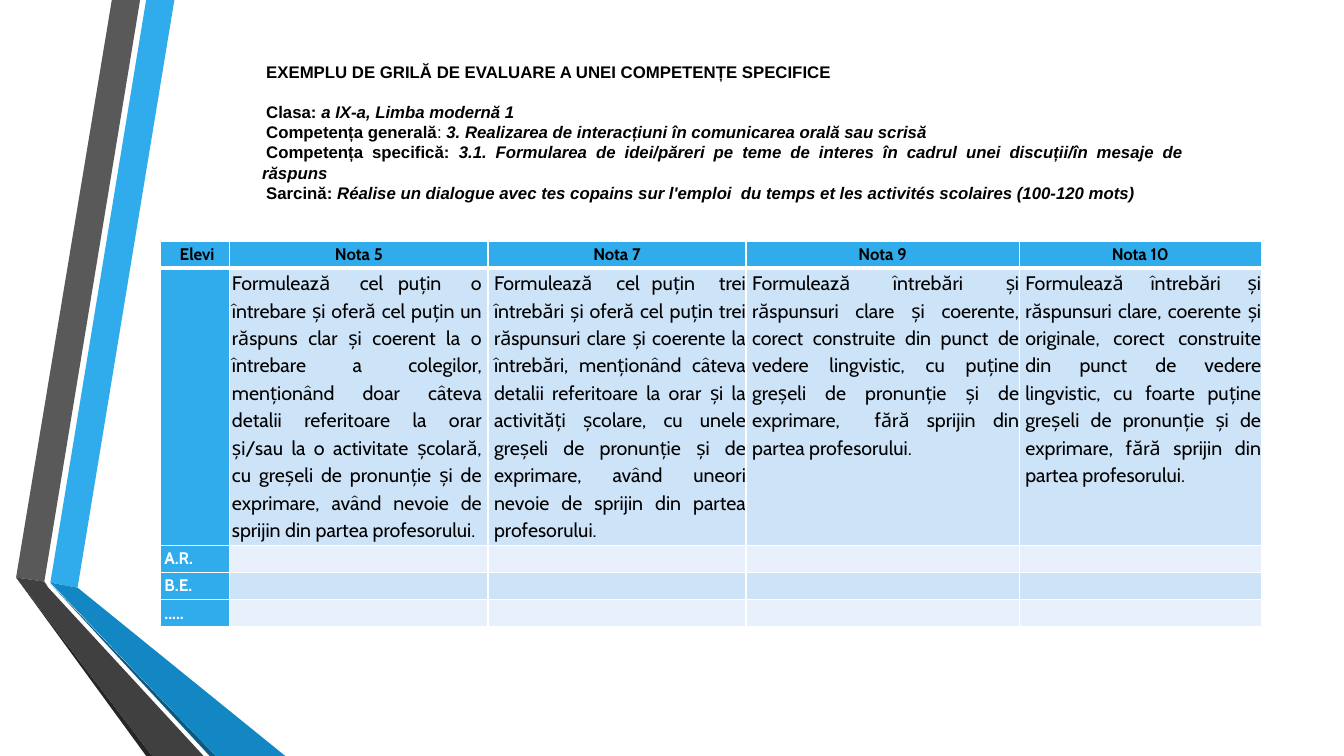
from dataclasses import dataclass

from lxml.etree import SubElement
from pptx import Presentation
from pptx.dml.color import RGBColor
from pptx.enum.text import MSO_ANCHOR, MSO_AUTO_SIZE, PP_ALIGN
from pptx.oxml import parse_xml
from pptx.oxml.ns import nsdecls, qn
from pptx.util import Inches, Pt


@dataclass(frozen=True)
class Theme:
    """Colours, fonts and type sizes of the slide."""
    blue: str = "30ACEC"
    deep_blue: str = "1287C3"
    navy: str = "0C5A82"
    grey: str = "595959"
    dark_grey: str = "404040"
    charcoal: str = "262626"
    band: str = "CDE3F8"
    light_band: str = "E8F1FB"
    white: str = "FFFFFF"
    black: str = "000000"
    heading_font: str = "Arial"
    table_font: str = "Cabin"
    small: int = 12
    body: int = 14


T = Theme()

RIBBONS = [
    (T.blue, [(0.5, 5.78), (0.77, 5.83), (1.73, 0), (1.45, 0)]),
    (T.grey, [(1.39, 0), (1.11, 0), (0.16, 5.73), (0.44, 5.77)]),
    (T.charcoal, [(0.16, 5.73), (1.45, 7.5), (1.51, 7.5)]),
    (T.navy, [(0.5, 5.79), (2.08, 7.5), (2.14, 7.5)]),
    (T.deep_blue, [(0.5, 5.78), (2.14, 7.5), (2.83, 7.5), (0.77, 5.83)]),
    (T.dark_grey,
     [(0.16, 5.73), (1.51, 7.5), (2.02, 7.5), (0.48, 5.83), (0.44, 5.77)]),
]

TITLE = "EXEMPLU DE GRILĂ DE EVALUARE A UNEI COMPETENȚE SPECIFICE"
DETAILS = [
    ("Clasa", ": ", True, "a IX-a, Limba modernă 1"),
    ("Competența generală", ": ", False,
     "3. Realizarea de interacțiuni în comunicarea orală sau scrisă"),
    ("Competența specifică", ": ", True,
     "3.1. Formularea de idei/păreri pe teme de interes în cadrul unei "
     "discuții/în mesaje de răspuns"),
    ("Sarcină", ": ", True,
     "Réalise un dialogue avec tes copains sur l'emploi  du temps et les "
     "activités scolaires (100-120 mots)"),
]

HEADERS = ["Elevi", "Nota 5", "Nota 7", "Nota 9", "Nota 10"]
DESCRIPTORS = [
    "",
    "Formulează  cel puțin  o întrebare și oferă cel puțin un răspuns clar și "
    "coerent la o întrebare a colegilor, menționând doar câteva detalii "
    "referitoare la orar și/sau la o activitate școlară, cu greșeli de pronunție "
    "și de exprimare, având nevoie de sprijin din partea profesorului.",
    "Formulează  cel puțin  trei întrebări și oferă cel puțin trei răspunsuri "
    "clare și coerente la întrebări, menționând câteva detalii referitoare la "
    "orar și la activități școlare, cu unele greșeli de pronunție și de "
    "exprimare, având uneori nevoie de sprijin din partea profesorului.",
    "Formulează întrebări și răspunsuri clare și coerente, corect construite din "
    "punct de vedere lingvistic, cu puține greșeli de pronunție și de exprimare,  "
    "fără sprijin din partea profesorului.",
    "Formulează întrebări și răspunsuri clare, coerente și originale, corect "
    "construite din punct de vedere lingvistic, cu foarte puține greșeli de "
    "pronunție și de exprimare, fără sprijin din partea profesorului.",
]
PUPILS = ["A.R.", "B.E.", "....."]
ROWS = [HEADERS, DESCRIPTORS] + [[pupil] + [""] * 4 for pupil in PUPILS]
COL_WIDTHS = [0.69, 2.56, 2.56, 2.71, 2.4]
ROW_HEIGHTS = [0.27, 2.75, 0.27, 0.27, 0.27]


def rgb(color):
    """Turn a hex string into a colour."""
    return RGBColor.from_string(color)


def paint(target, color):
    """Give a shape or cell a solid fill."""
    target.fill.solid()
    target.fill.fore_color.rgb = rgb(color)


def add_run(p, text, font, size, color, bold=False, italic=False):
    """Append one formatted run to a paragraph."""
    r = p.add_run()
    r.text = text
    r.font.name = font
    r.font.size = Pt(size)
    r.font.color.rgb = rgb(color)
    r.font.bold = bold
    r.font.italic = italic


def set_indent(p, left, first, right=0):
    """Set the side margins and first-line indent in inches."""
    pPr = p._p.get_or_add_pPr()
    pPr.set("marL", str(Inches(left)))
    pPr.set("marR", str(Inches(right)))
    pPr.set("indent", str(Inches(first)))


def draw_ribbons(s, x, y):
    """Draw the folded ribbons from the given top left corner."""
    for color, points in RIBBONS:
        corners = [(Inches(x + px), Inches(y + py)) for px, py in points]
        fb = s.shapes.build_freeform(*corners[0], scale=1.0)
        fb.add_line_segments(corners[1:], close=True)
        sp = fb.convert_to_shape()
        sp.shadow.inherit = False
        paint(sp, color)
        sp.line.fill.background()


def place_text(sp, x, y, w, h):
    """Move a placeholder into a box and return its text frame."""
    sp.left, sp.top, sp.width, sp.height = map(Inches, (x, y, w, h))
    tf = sp.text_frame
    tf.word_wrap = True
    tf.auto_size = MSO_AUTO_SIZE.NONE
    tf.vertical_anchor = MSO_ANCHOR.TOP
    return tf


def format_line(p):
    """Justify a heading paragraph without bullet or spacing."""
    p.alignment = PP_ALIGN.JUSTIFY
    p.space_before = Pt(0)
    set_indent(p, 0, 0.04)
    SubElement(p._p.get_or_add_pPr(), qn("a:buNone"))


def fill_heading(s, x, y, w, h):
    """Write the title and the task details into one box."""
    title_h = 0.4
    p = place_text(s.shapes.title, x, y, w, title_h).paragraphs[0]
    format_line(p)
    add_run(p, TITLE, T.heading_font, T.small, T.black, True)

    tf = place_text(s.placeholders[1], x, y + title_h, w, h - title_h)
    for i, (label, colon, bold_colon, value) in enumerate(DETAILS):
        p = tf.paragraphs[0] if i == 0 else tf.add_paragraph()
        format_line(p)
        add_run(p, label, T.heading_font, T.small, T.black, True)
        add_run(p, colon, T.heading_font, T.small, T.black, bold_colon)
        add_run(p, value, T.heading_font, T.small, T.black, True, True)


def set_borders(cell, bottom):
    """Draw white cell borders with the given bottom width in points."""
    tcPr = cell._tc.get_or_add_tcPr()
    widths = {"lnL": 1, "lnR": 1, "lnT": 1, "lnB": bottom}
    for i, (tag, width) in enumerate(widths.items()):
        tcPr.insert(i, parse_xml(
            f'<a:{tag} {nsdecls("a")} w="{Pt(width)}"><a:solidFill>'
            f'<a:srgbClr val="{T.white}"/></a:solidFill></a:{tag}>'))


def fill_cell(cell, text, row, col):
    """Format one cell according to its row and column."""
    header = row == 0
    key = header or col == 0
    paint(cell, T.blue if key else T.band if row % 2 else T.light_band)
    set_borders(cell, 3 if header else 1)
    cell.margin_left = cell.margin_right = cell.margin_top = cell.margin_bottom = 0
    p = cell.text_frame.paragraphs[0]
    if not text:
        SubElement(p._p, qn("a:endParaRPr"), sz=str(T.small * 100))
        return
    p.alignment = PP_ALIGN.CENTER if header else PP_ALIGN.JUSTIFY
    p.line_spacing = 1.15
    p.space_before = Pt(6)
    p.space_after = Pt(0 if header else 6)
    if col == 0:
        set_indent(p, 0, 0.04)
    elif not header:
        left, right = (0.02, 0.06) if col == 1 else (0.06, 0)
        set_indent(p, left, 0, right)
    add_run(p, text, T.table_font, T.small if key else T.body,
            T.white if key and not header else T.black, key)


def add_grid(s, x, y, w, h):
    """Add the assessment grid in the given box."""
    frame = s.shapes.add_table(len(ROWS), len(HEADERS), *map(Inches, (x, y, w, h)))
    table = frame.table
    for column, width in zip(table.columns, COL_WIDTHS):
        column.width = Inches(width)
    for row, height in zip(table.rows, ROW_HEIGHTS):
        row.height = Inches(height)
    for i, texts in enumerate(ROWS):
        for j, text in enumerate(texts):
            fill_cell(table.cell(i, j), text, i, j)


def main():
    """Build and save the slide."""
    prs = Presentation()
    prs.slide_width, prs.slide_height = Inches(13.33), Inches(7.5)
    s = prs.slides.add_slide(prs.slide_layouts[1])
    draw_ribbons(s, 0, 0)
    add_grid(s, 1.59, 2.39, sum(COL_WIDTHS), sum(ROW_HEIGHTS))
    fill_heading(s, 2.5, 0.56, 9.34, 1.51)
    prs.save("out.pptx")


if __name__ == "__main__":
    main()
